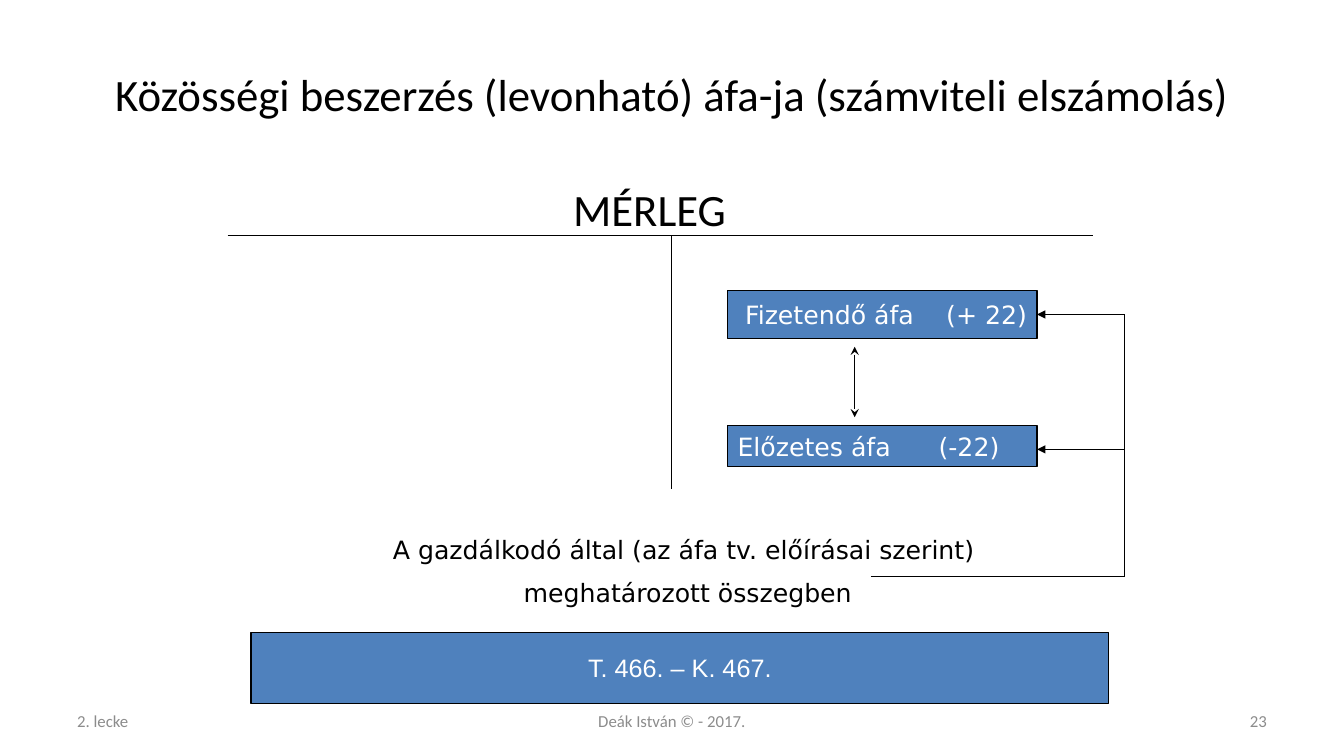
"""Build the slide on the accounting of deductible VAT."""
from lxml.etree import SubElement
from pptx import Presentation
from pptx.dml.color import RGBColor
from pptx.enum.shapes import MSO_CONNECTOR, MSO_SHAPE
from pptx.enum.text import MSO_ANCHOR, PP_ALIGN
from pptx.oxml.ns import qn
from pptx.util import Pt

BLACK, WHITE, BLUE, GREY = "000000", "FFFFFF", "4F81BD", "8C8C8C"
LEFT, MID, RIGHT = PP_ALIGN.LEFT, PP_ALIGN.CENTER, PP_ALIGN.RIGHT
TOP, CORE = MSO_ANCHOR.TOP, MSO_ANCHOR.MIDDLE
SANS = "DejaVu Sans"
TAB = 143.6

TEXTS = [
    (["Közösségi beszerzés (levonható) áfa-ja (számviteli elszámolás)"],
     (48, 21.6, 864, 90), "Calibri", 32, BLACK, MID, CORE),
    (["MÉRLEG"], (344, 126, 240, 46), "Calibri", 32, BLACK, MID, TOP),
    (["A gazdálkodó által (az áfa tv. előírásai szerint)",
      " meghatározott összegben"],
     (185, 378, 607, 61.2), SANS, 18, BLACK, MID, TOP),
    (["2. lecke"], (48, 500.5, 224, 28.8), "Calibri", 12, GREY, LEFT, CORE),
    (["Deák István © - 2017."],
     (328, 500.5, 304, 28.8), "Calibri", 12, GREY, MID, CORE),
    (["23"], (688, 500.5, 224, 28.8), "Calibri", 12, GREY, RIGHT, CORE),
]
BOXES = [
    ("Fizetendő áfa\t(+ 22)", (519.8, 207.5, 221, 34), SANS, LEFT, 12.5),
    ("Előzetes áfa\t(-22)", (519.8, 304, 221, 29.5), SANS, LEFT, 7.2),
    ("T. 466. – K. 467.", (179.3, 451.5, 612.7, 51), "Arial", MID, 7.2),
]
LINES = [
    ((162.7, 168, 780.5, 168), {}),
    ((480, 168, 480, 349), {}),
    ((610.5, 247.7, 610.5, 298), {"headEnd": "stealth", "tailEnd": "stealth"}),
    ((622, 412, 803, 412), {}),
    ((803, 224.6, 803, 412), {}),
    ((803, 224.6, 740.8, 224.6), {"tailEnd": "triangle"}),
    ((803, 321, 740.8, 321), {"tailEnd": "triangle"}),
]


def rgb(code):
    """Turn a hex string into a colour."""
    return RGBColor.from_string(code)


def write(frame, rows, font, size, tint, align, anchor):
    """Fill a text frame with styled paragraphs."""
    frame.word_wrap = True
    frame.vertical_anchor = anchor
    for i, row in enumerate(rows):
        para = frame.add_paragraph() if i else frame.paragraphs[0]
        para.text = row
        para.alignment = align
        para.space_before = Pt(size / 2 if i else 0)
        para.font.name = font
        para.font.size = Pt(size)
        para.font.color.rgb = rgb(tint)


def label(shapes, rows, place, *style):
    """Add a plain text box."""
    box = shapes.add_textbox(*map(Pt, place))
    write(box.text_frame, rows, *style)


def panel(shapes, text, place, font, align, inset):
    """Add a blue box, with a tab stop for its amount."""
    box = shapes.add_shape(MSO_SHAPE.RECTANGLE, *map(Pt, place))
    box.shadow.inherit = False
    box.fill.solid()
    box.fill.fore_color.rgb = rgb(BLUE)
    box.line.color.rgb = rgb(BLACK)
    box.line.width = Pt(0.75)
    frame = box.text_frame
    write(frame, [text], font, 18, WHITE, align, CORE)
    frame.margin_left = Pt(inset)
    frame.margin_right = Pt(7.2 if align == MID else 0)
    if "\t" in text:
        props = frame.paragraphs[0]._p.get_or_add_pPr()
        stops = props.makeelement(qn("a:tabLst"))
        SubElement(stops, qn("a:tab"), pos=str(Pt(TAB)), algn="l")
        props.find(qn("a:defRPr")).addprevious(stops)


def rule(shapes, ends, tips):
    """Add a thin line with optional arrowheads."""
    line = shapes.add_connector(MSO_CONNECTOR.STRAIGHT, *map(Pt, ends))
    line.line.color.rgb = rgb(BLACK)
    line.line.width = Pt(0.75)
    props = line._element.spPr
    for tag, kind in tips.items():
        SubElement(props.find(qn("a:ln")), qn("a:" + tag), type=kind)
    SubElement(props, qn("a:effectLst"))


def main():
    """Build and save the deck."""
    deck = Presentation()
    deck.slide_width, deck.slide_height = Pt(960), Pt(540)
    shapes = deck.slides.add_slide(deck.slide_layouts[6]).shapes
    for item in TEXTS:
        label(shapes, *item)
    for item in BOXES:
        panel(shapes, *item)
    for item in LINES:
        rule(shapes, *item)
    deck.save("out.pptx")


if __name__ == "__main__":
    main()
